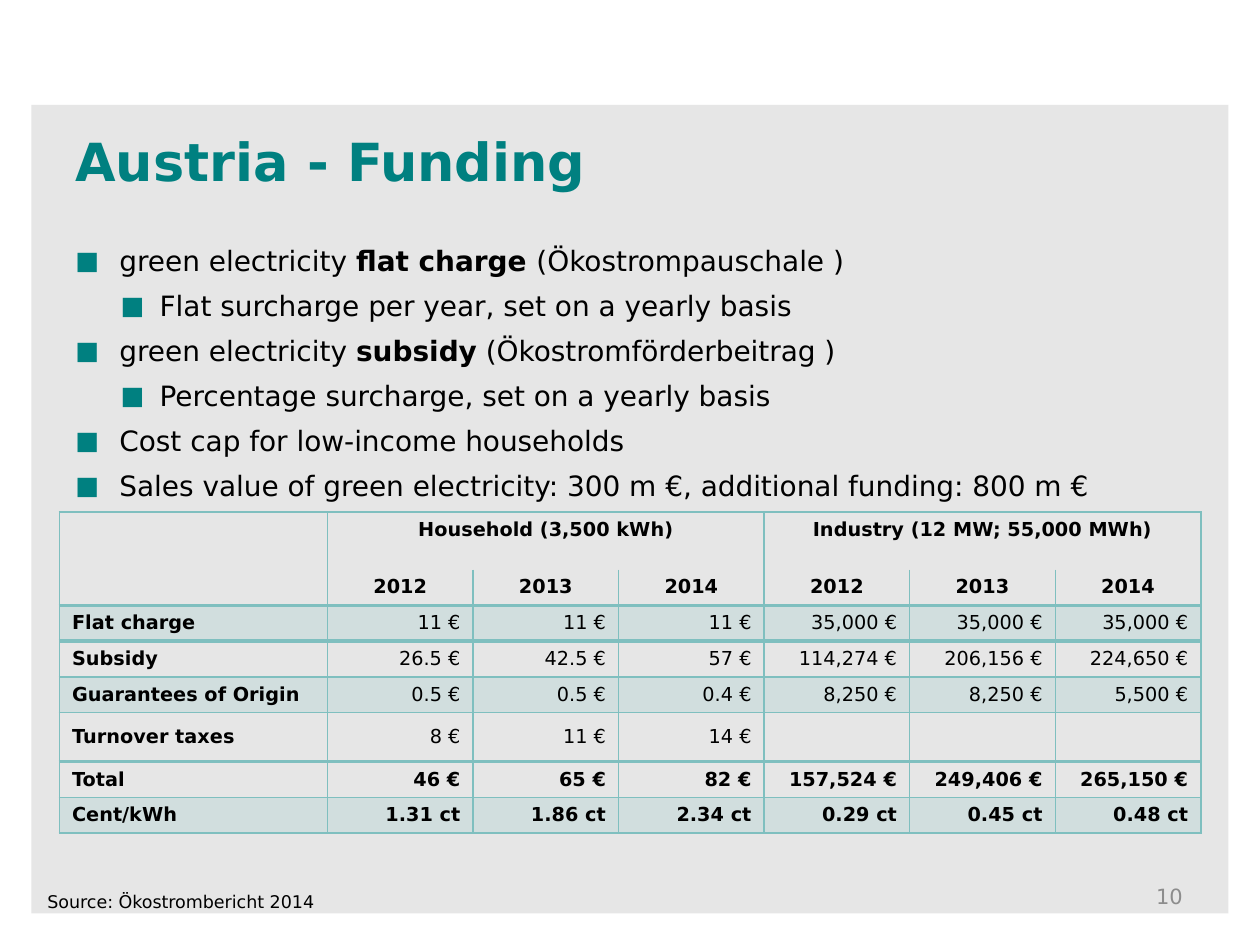
from dataclasses import dataclass
from typing import NamedTuple

from pptx import Presentation
from pptx.dml.color import RGBColor
from pptx.enum.shapes import MSO_SHAPE
from pptx.enum.text import MSO_ANCHOR, PP_ALIGN
from pptx.oxml.ns import qn
from pptx.util import Pt
from lxml import etree

RECTANGLE = MSO_SHAPE.RECTANGLE
TOP, MIDDLE = MSO_ANCHOR.TOP, MSO_ANCHOR.MIDDLE
LEFT, CENTER, RIGHT = PP_ALIGN.LEFT, PP_ALIGN.CENTER, PP_ALIGN.RIGHT


@dataclass(frozen=True)
class Theme:
    font: str = "DejaVu Sans"
    panel: str = "E6E6E6"
    accent: str = "008080"
    grid: str = "7FBFBF"
    ink: str = "000000"
    muted: str = "8C8C8C"
    title_size: float = 30
    body_size: float = 16
    number_size: float = 12
    table_size: float = 11
    source_size: float = 10
    thin: float = 1
    thick: float = 2.25
    band_alpha: int = 20


class Box(NamedTuple):
    left: float
    top: float
    width: float
    height: float


class Run(NamedTuple):
    text: str
    bold: bool = False


class Bullet(NamedTuple):
    runs: list[Run]
    level: int = 0
    nested: bool = False


class TableRow(NamedTuple):
    label: str
    values: list[str]
    height: float = 20
    banded: bool = False
    bold: bool = False


THEME = Theme()

BULLETS = [
    Bullet([Run("green electricity "), Run("flat charge ", True), Run("(Ökostrompauschale )")]),
    Bullet([Run("Flat surcharge per year, set on a yearly basis")], 1, True),
    Bullet([Run("green electricity "), Run("subsidy", True), Run(" (Ökostromförderbeitrag )")]),
    Bullet([Run("Percentage surcharge, set on a yearly basis")], 1, True),
    Bullet([Run("Cost cap for low-income households")], 1),
    Bullet([Run("Sales value of green electricity: 300 m €, additional funding: 800 m €")], 1),
]

GROUPS = ["Household (3,500 kWh)", "Industry (12 MW; 55,000 MWh)"]
YEARS = ["2012", "2013", "2014"]
COST_ROWS = [
    TableRow("Flat charge", ["11 €"] * 3 + ["35,000 €"] * 3, banded=True),
    TableRow("Subsidy", ["26.5 €", "42.5 €", "57 €", "114,274 €", "206,156 €", "224,650 €"]),
    TableRow("Guarantees of Origin",
             ["0.5 €", "0.5 €", "0.4 €", "8,250 €", "8,250 €", "5,500 €"], banded=True),
    TableRow("Turnover taxes", ["8 €", "11 €", "14 €", "", "", ""], height=28),
    TableRow("Total", ["46 €", "65 €", "82 €", "157,524 €", "249,406 €", "265,150 €"], bold=True),
    TableRow("Cent/kWh", ["1.31 ct", "1.86 ct", "2.34 ct", "0.29 ct", "0.45 ct", "0.48 ct"],
             banded=True, bold=True),
]
HEADER_HEIGHTS = [33, 20]
LABEL_WIDTH, VALUE_WIDTH = 153.2, 83.17
# Widths of the horizontal rules, from the table's top edge to its bottom edge
RULES = [THEME.thin, 0, THEME.thick, THEME.thick, THEME.thin, THEME.thin,
         THEME.thick, THEME.thin, THEME.thin]


def set_font(font, size: float, color: str, bold: bool = False) -> None:
    for name, value in {"name": THEME.font, "size": Pt(size), "bold": bold}.items():
        setattr(font, name, value)
    font.color.rgb = RGBColor.from_string(color)


def add_textbox(slide, box: Box, anchor=TOP):
    frame = slide.shapes.add_textbox(*map(Pt, box)).text_frame
    for name, value in {"word_wrap": True, "vertical_anchor": anchor}.items():
        setattr(frame, name, value)
    return frame


def add_label(slide, box: Box, text: str, size: float, color: str,
              bold: bool = False, align=LEFT, anchor=TOP) -> None:
    paragraph = add_textbox(slide, box, anchor).paragraphs[0]
    paragraph.alignment = align
    run = paragraph.add_run()
    run.text = text
    set_font(run.font, size, color, bold)


def add_mark(paragraph, margin: float, hanging: float) -> None:
    properties = paragraph._p.get_or_add_pPr()
    properties.set("marL", str(Pt(margin)))
    properties.set("indent", str(-Pt(hanging)))
    color = etree.SubElement(properties, qn("a:buClr"))
    etree.SubElement(color, qn("a:srgbClr"), val=THEME.accent)
    etree.SubElement(properties, qn("a:buSzPct"), val="90000")
    etree.SubElement(properties, qn("a:buFont"), typeface=THEME.font)
    etree.SubElement(properties, qn("a:buChar"), char="■")


def add_bullets(slide, box: Box, bullets: list[Bullet]) -> None:
    frame = add_textbox(slide, box)
    for index, bullet in enumerate(bullets):
        paragraph = frame.add_paragraph() if index else frame.paragraphs[0]
        add_mark(paragraph, *((48.2, 22.3) if bullet.nested else (25.2, 25.2)))
        spacing = {"level": bullet.level, "line_spacing": 1.1,
                   "space_before": Pt(4.6 if index else 0)}
        for name, value in spacing.items():
            setattr(paragraph, name, value)
        for part in bullet.runs:
            run = paragraph.add_run()
            run.text = part.text
            set_font(run.font, THEME.body_size, THEME.ink, part.bold)


def style_cell(cell, row: int, banded: bool) -> None:
    properties = cell._tc.get_or_add_tcPr()
    borders = {"lnL": THEME.thin, "lnR": THEME.thin, "lnT": RULES[row], "lnB": RULES[row + 1]}
    for side, width in borders.items():
        line = etree.SubElement(properties, qn(f"a:{side}"), w=str(Pt(width)))
        if width:
            fill = etree.SubElement(line, qn("a:solidFill"))
            etree.SubElement(fill, qn("a:srgbClr"), val=THEME.grid)
        else:
            etree.SubElement(line, qn("a:noFill"))
    if banded:
        cell.fill.solid()
        cell.fill.fore_color.rgb = RGBColor.from_string(THEME.grid)
        color = properties.find(f"{qn('a:solidFill')}/{qn('a:srgbClr')}")
        etree.SubElement(color, qn("a:alpha"), val=str(THEME.band_alpha * 1000))
    else:
        cell.fill.background()


def write_cell(cell, text: str, bold: bool, align, anchor) -> None:
    cell.vertical_anchor = anchor
    paragraph = cell.text_frame.paragraphs[0]
    paragraph.alignment = align
    set_font(paragraph.font, THEME.table_size, THEME.ink, bold)
    if text:
        run = paragraph.add_run()
        run.text = text
        set_font(run.font, THEME.table_size, THEME.ink, bold)


def add_cost_table(slide, left: float, top: float) -> None:
    heights = HEADER_HEIGHTS + [row.height for row in COST_ROWS]
    widths = [LABEL_WIDTH] + [VALUE_WIDTH] * len(GROUPS) * len(YEARS)
    box = Box(left, top, sum(widths), sum(heights))
    table = slide.shapes.add_table(len(heights), len(widths), *map(Pt, box)).table
    table.first_row = table.horz_banding = False
    for column, width in zip(table.columns, widths):
        column.width = Pt(width)
    for table_row, height in zip(table.rows, heights):
        table_row.height = Pt(height)

    # Two header rows: consumer groups above their years
    group_cells = [text for group in GROUPS for text in [group] + [""] * (len(YEARS) - 1)]
    for row, texts in enumerate([[""] + group_cells, [""] + YEARS * len(GROUPS)]):
        for column, text in enumerate(texts):
            style_cell(table.cell(row, column), row, False)
            write_cell(table.cell(row, column), text, True, CENTER, TOP)
    for first in range(1, len(widths), len(YEARS)):
        table.cell(0, first).merge(table.cell(0, first + len(YEARS) - 1))

    # Cost rows
    for row, cost in enumerate(COST_ROWS, len(HEADER_HEIGHTS)):
        for column, text in enumerate([cost.label] + cost.values):
            is_label = column == 0
            style_cell(table.cell(row, column), row, cost.banded)
            write_cell(table.cell(row, column), text, is_label or cost.bold,
                       LEFT if is_label else RIGHT, MIDDLE)


def main() -> None:
    deck = Presentation()
    deck.slide_width, deck.slide_height = Pt(720), Pt(540)
    slide = deck.slides.add_slide(deck.slide_layouts[6])

    # Grey panel
    panel = slide.shapes.add_shape(RECTANGLE, *map(Pt, Box(18, 60, 684, 462)))
    panel.shadow.inherit = False
    panel.fill.solid()
    panel.fill.fore_color.rgb = RGBColor.from_string(THEME.panel)
    panel.line.fill.background()

    # Bullets, title, page number, table and source
    add_bullets(slide, Box(36, 134, 648, 368), BULLETS)
    add_label(slide, Box(36, 60.5, 648, 62.6), "Austria - Funding",
              THEME.title_size, THEME.accent, bold=True, anchor=MIDDLE)
    add_label(slide, Box(515, 502, 168, 20), "10",
              THEME.number_size, THEME.muted, align=RIGHT, anchor=MIDDLE)
    add_cost_table(slide, 34, 292.5)
    add_label(slide, Box(20, 505.5, 622, 19.4), "Source: Ökostrombericht 2014",
              THEME.source_size, THEME.ink)

    deck.save("out.pptx")


if __name__ == "__main__":
    main()
